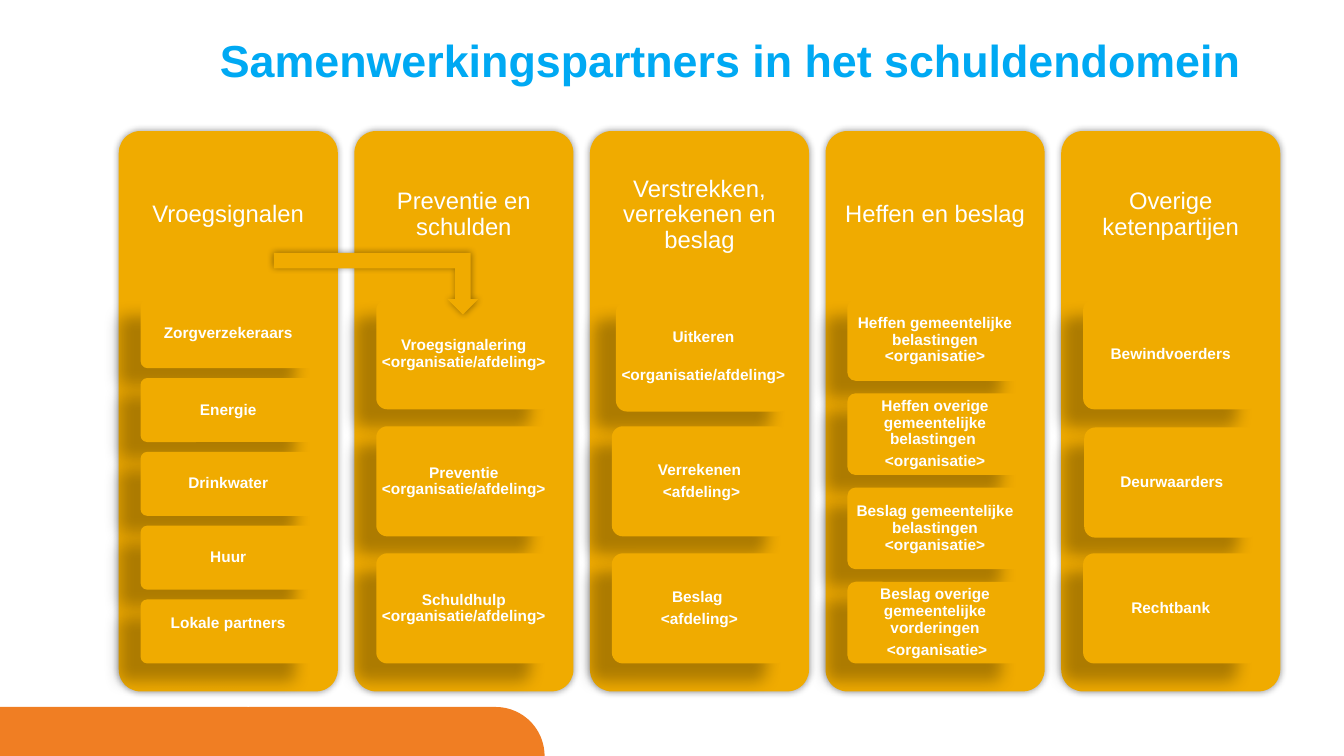
from dataclasses import dataclass
from math import cos, pi, sin

from lxml.etree import SubElement
from pptx import Presentation
from pptx.dml.color import RGBColor
from pptx.enum.shapes import MSO_SHAPE
from pptx.enum.text import MSO_ANCHOR, MSO_AUTO_SIZE, PP_ALIGN
from pptx.oxml.ns import qn
from pptx.util import Pt

AMBER = "F0AB00"
ORANGE = "F07E23"
WHITE = "FFFFFF"
SKY_BLUE = "00A9F3"
GLOW = {"opacity": 40, "blur": 5, "distance": 0, "angle": 0}
DROP = {"opacity": 28, "blur": 11.8, "distance": 19.7, "angle": 141}
SLIDE_SIZE = (960, 540)
COLUMN_PITCH = 168.3
CARD_GAP = 0.154


@dataclass
class Card:
    text: str
    nudge: tuple = (0, 0)
    weight: float = 1
    bottom: float = 1.5


COLUMNS = [
    ("Vroegsignalen", [
        Card("Zorgverzekeraars", weight=1.08), Card("Energie"), Card("Drinkwater"),
        Card("Huur"), Card("Lokale partners", bottom=13)]),
    ("Preventie en schulden", [
        Card("Vroegsignalering <organisatie/afdeling>"),
        Card("Preventie <organisatie/afdeling>"),
        Card("Schuldhulp <organisatie/afdeling>")]),
    ("Verstrekken, verrekenen en beslag", [
        Card("Uitkeren\n <organisatie/afdeling>", nudge=(2.9, 1.6)),
        Card("Verrekenen\n <afdeling>"), Card("Beslag \n<afdeling>")]),
    ("Heffen en beslag", [
        Card("Heffen gemeentelijke belastingen <organisatie>"),
        Card("Heffen overige gemeentelijke belastingen \n<organisatie>"),
        Card("Beslag gemeentelijke belastingen <organisatie>"),
        Card("Beslag overige gemeentelijke vorderingen\n <organisatie>")]),
    ("Overige ketenpartijen", [
        Card("Bewindvoerders"), Card("Deurwaarders", nudge=(0.8, 0.9)), Card("Rechtbank")]),
]


def color(value):
    return RGBColor.from_string(value)


def set_values(target, values):
    for name, value in values.items():
        setattr(target, name, value)


def paint(shape, fill):
    shape.shadow.inherit = False
    shape.fill.solid()
    shape.fill.fore_color.rgb = color(fill)
    shape.line.fill.background()


def cast_shadow(shape, opacity, blur, distance, angle):
    effects = shape.element.spPr.find(qn("a:effectLst"))
    shadow = SubElement(effects, qn("a:outerShdw"), {
        "blurRad": str(Pt(blur)), "dist": str(Pt(distance)),
        "dir": str(angle * 60000), "algn": "ctr", "rotWithShape": "0"})
    black = SubElement(shadow, qn("a:srgbClr"), val="000000")
    SubElement(black, qn("a:alpha"), val=str(opacity * 1000))


def write(shape, text, frame_values, font_values, font_color, alignment):
    frame = shape.text_frame
    set_values(frame, {"word_wrap": True, "auto_size": MSO_AUTO_SIZE.NONE, **frame_values})
    frame.text = text
    for paragraph in frame.paragraphs:
        set_values(paragraph, {"alignment": alignment, "line_spacing": 0.9,
                               "space_before": Pt(0),
                               "space_after": int(font_values["size"] * 0.35)})
        set_values(paragraph.font, {"name": "Arial", **font_values})
        paragraph.font.color.rgb = color(font_color)


def margins(size, bottom):
    values = {f"margin_{side}": Pt(size) for side in ("left", "top", "right")}
    return {**values, "margin_bottom": Pt(bottom), "vertical_anchor": MSO_ANCHOR.MIDDLE}


def add_amber_shape(slide, kind, box, shadow):
    shape = slide.shapes.add_shape(kind, *map(Pt, box))
    paint(shape, AMBER)
    cast_shadow(shape, **shadow)
    return shape


def add_panel(slide, box, shadow):
    panel = add_amber_shape(slide, MSO_SHAPE.ROUNDED_RECTANGLE, box, shadow)
    panel.adjustments[0] = 0.1
    return panel


def add_title(slide, box):
    title = slide.shapes.title
    set_values(title, dict(zip(("left", "top", "width", "height"), map(Pt, box))))
    write(title, "Samenwerkingspartners in het schuldendomein",
          {"vertical_anchor": MSO_ANCHOR.TOP}, {"size": Pt(32), "bold": True},
          SKY_BLUE, PP_ALIGN.LEFT)


def add_cards(slide, cards, box):
    left, top, width, height = box
    unit = height / (sum(card.weight for card in cards) + CARD_GAP * (len(cards) - 1))
    for card in cards:
        card_height = unit * card.weight
        across, down = card.nudge
        shape = add_panel(slide, (left + across, top + down, width, card_height), DROP)
        write(shape, card.text, margins(1.5, card.bottom), {"size": Pt(11), "bold": True},
              WHITE, PP_ALIGN.CENTER)
        top += card_height + unit * CARD_GAP


def add_column(slide, heading, cards, box):
    left, top, width, height = box
    add_panel(slide, box, GLOW)
    heading_height = height * 0.3
    heading_box = slide.shapes.add_textbox(*map(Pt, (left, top, width, heading_height)))
    write(heading_box, heading, margins(5, 5), {"size": Pt(17)}, WHITE, PP_ALIGN.CENTER)
    add_cards(slide, cards, (left + width * 0.1, top + heading_height, width * 0.8, height * 0.65))


def add_arrow(slide, box):
    arrow = add_amber_shape(slide, MSO_SHAPE.BENT_UP_ARROW, box, GLOW)
    arrow.element.spPr.xfrm.set("flipV", "1")


def add_footer_tab(slide, box):
    left, top, width, height = box
    right, bottom = left + width, top + height
    steps = 24
    angles = [pi / 2 * (1 - step / steps) for step in range(steps + 1)]
    curve = [(right - height + height * cos(angle), bottom - height * sin(angle))
             for angle in angles]
    points = [(Pt(x), Pt(y)) for x, y in [(left, top), *curve, (left, bottom)]]
    builder = slide.shapes.build_freeform(*points[0])
    builder.add_line_segments(points[1:], close=True)
    paint(builder.convert_to_shape(), ORANGE)


def build_partner_slide(presentation):
    slide = presentation.slides.add_slide(presentation.slide_layouts[5])
    for left in (0, 177.5):
        add_footer_tab(slide, (left, 505, 211.5, 35))
    for index, (heading, cards) in enumerate(COLUMNS):
        add_column(slide, heading, cards, (84.8 + index * COLUMN_PITCH, 93.6, 156.5, 400.3))
    add_arrow(slide, (195.6, 180.7, 146, 44))
    add_title(slide, (149.8, 23.8, 789.8, 56.9))


def main():
    presentation = Presentation()
    width, height = SLIDE_SIZE
    set_values(presentation, {"slide_width": Pt(width), "slide_height": Pt(height)})
    build_partner_slide(presentation)
    presentation.save("out.pptx")


if __name__ == "__main__":
    main()
